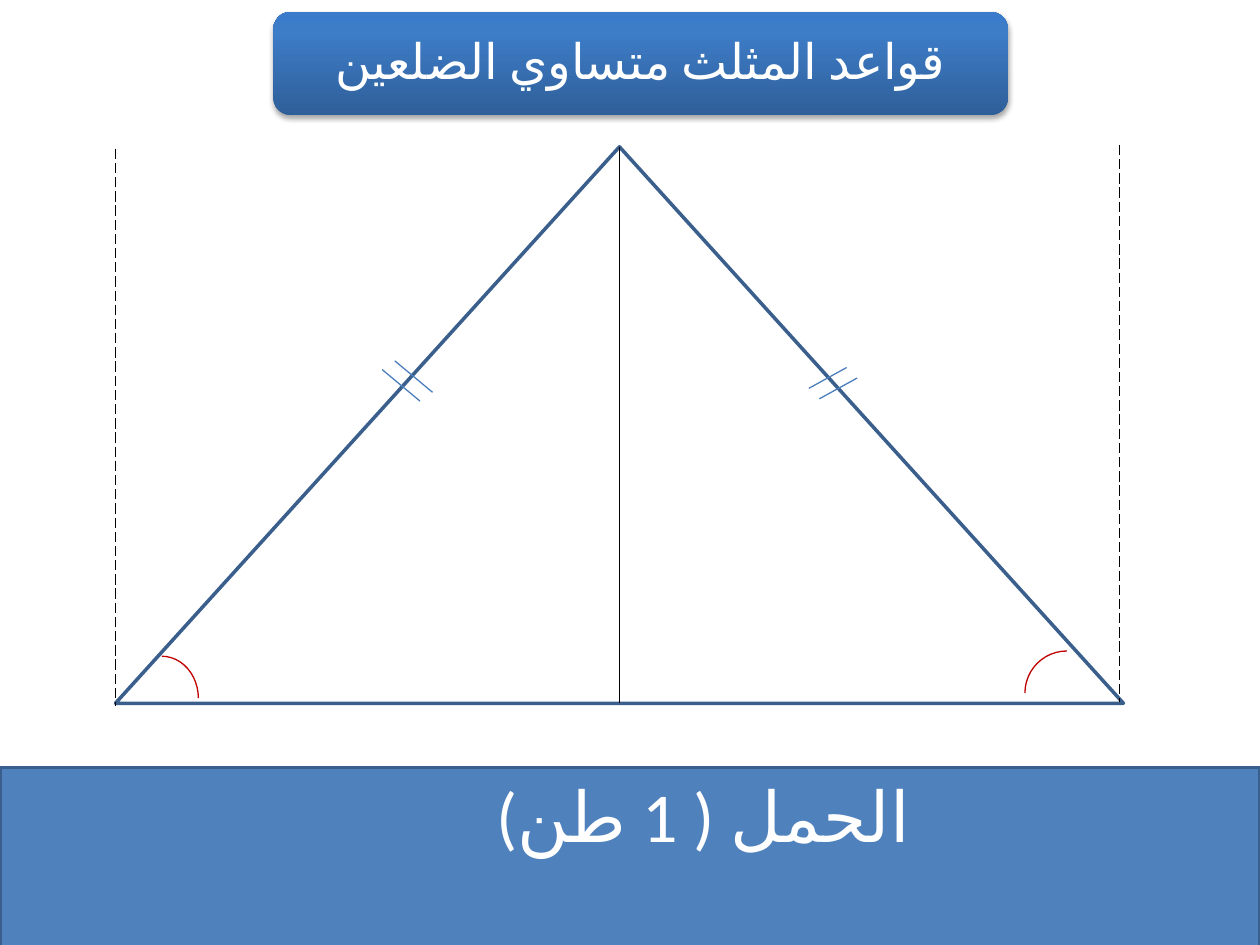
from lxml import etree
from pptx import Presentation
from pptx.dml.color import RGBColor
from pptx.enum import dml, lang, shapes, text
from pptx.oxml import ns, parse_xml
from pptx.util import Pt

COLORS = {
    "outline": "3A5F8C", "tick": "4B7EBC", "angle": "C00000",
    "guide": "000000", "band": "4F81BD", "text": "FFFFFF",
}
TITLE_STOPS = [(0, "2F5F99"), (80, "3D7CC7"), (100, "3A7CCB")]
FONT = "Calibri"


def rgb(name):
    return RGBColor.from_string(COLORS[name])


def add_shape(container, kind, box, fill=None, line=None, width=0.75):
    shape = container.add_shape(kind, *map(Pt, box))
    shape.shadow.inherit = False
    if fill:
        shape.fill.solid()
        shape.fill.fore_color.rgb = rgb(fill)
    else:
        shape.fill.background()
    if line:
        shape.line.color.rgb = rgb(line)
        shape.line.width = Pt(width)
    else:
        shape.line.fill.background()
    return shape


def add_line(slide, start, end, color, dash=None):
    connector = slide.shapes.add_connector(
        shapes.MSO_CONNECTOR.STRAIGHT, *map(Pt, (*start, *end)))
    connector.line.color.rgb = rgb(color)
    connector.line.width = Pt(0.75)
    if dash:
        connector.line.dash_style = dash
    etree.SubElement(connector._element.spPr, ns.qn("a:effectLst"))


def add_text(container, box, content, size):
    text_box = container.add_textbox(*map(Pt, box))
    frame = text_box.text_frame
    frame.word_wrap = True
    paragraph = frame.paragraphs[0]
    paragraph.alignment = text.PP_ALIGN.CENTER
    run = paragraph.add_run()
    run.text = content
    run.font.name = FONT
    run.font.size = Pt(size)
    run.font.color.rgb = rgb("text")
    run.font.language_id = lang.MSO_LANGUAGE_ID.ARABIC
    # Arabic letters take the complex-script font
    etree.SubElement(run.font._element, ns.qn("a:cs"), typeface=FONT)
    return frame


def style_title(shape):
    """Give the title plate its three-stop gradient and soft shadow."""
    properties = shape._element.spPr
    stops = "".join(
        f'<a:gs pos="{position * 1000}"><a:srgbClr val="{color}"/></a:gs>'
        for position, color in TITLE_STOPS)
    gradient = parse_xml(
        f'<a:gradFill {ns.nsdecls("a")} rotWithShape="1"><a:gsLst>{stops}</a:gsLst>'
        '<a:lin ang="16200000" scaled="0"/></a:gradFill>')
    properties.replace(properties.find(ns.qn("a:noFill")), gradient)
    shadow = parse_xml(
        f'<a:outerShdw {ns.nsdecls("a")} blurRad="{Pt(3.1)}" dist="{Pt(1.8)}" '
        'dir="5400000" rotWithShape="0"><a:srgbClr val="000000">'
        '<a:alpha val="35000"/></a:srgbClr></a:outerShdw>')
    properties.find(ns.qn("a:effectLst")).append(shadow)


def add_title(slide):
    group = slide.shapes.add_group_shape()
    plate = add_shape(group.shapes, shapes.MSO_SHAPE.ROUNDED_RECTANGLE,
                      (156.24, 6.8, 419.76, 59.04))
    style_title(plate)
    frame = add_text(group.shapes, (159.12, 9.7, 414, 53.28),
                     "قواعد المثلث متساوي الضلعين", 28)
    frame.vertical_anchor = text.MSO_ANCHOR.MIDDLE
    frame.margin_left = frame.margin_right = Pt(8.64)
    frame.margin_top = frame.margin_bottom = Pt(8.64)
    paragraph = frame.paragraphs[0]
    paragraph.line_spacing = 0.9
    paragraph.space_after = Pt(9.8)
    paragraph._p.get_or_add_pPr().set("rtl", "1")


def add_triangle(slide):
    add_shape(slide.shapes, shapes.MSO_SHAPE.ISOSCELES_TRIANGLE,
              (66, 83.9, 576, 318), line="outline", width=2)

    # Pairs of ticks mark the equal sides
    ticks = [((483.84, 210), (-21.6, 11.9), (6, 6)),
             ((247.2, 224.2), (-21.6, -18), (-7.2, 5))]
    for (x, y), (dx, dy), (step_x, step_y) in ticks:
        for index in range(2):
            left, top = x + index * step_x, y + index * step_y
            add_line(slide, (left, top), (left + dx, top + dy), "tick")

    # Arcs mark the equal base angles
    add_shape(slide.shapes, shapes.MSO_SHAPE.ARC,
              (71.6, 375, 41.76, 48), line="angle")
    right_arc = add_shape(slide.shapes, shapes.MSO_SHAPE.ARC,
                          (585.7, 372, 48, 48), line="angle")
    right_arc._element.spPr.find(ns.qn("a:xfrm")).set("flipH", "1")


def add_guides(slide):
    dash = dml.MSO_LINE.LONG_DASH
    for x, top, bottom, style in [(353.9, 84, 401.76, None),
                                  (639.7, 82.8, 401.04, dash),
                                  (65.9, 84.96, 403.2, dash)]:
        add_line(slide, (x, top), (x, bottom), "guide", style)


def add_load(slide):
    add_shape(slide.shapes, shapes.MSO_SHAPE.RECTANGLE,
              (0, 438.5, 720, 113.76), "band", "outline", 2)
    frame = add_text(slide.shapes, (221.76, 437.76, 360, 55.44),
                     "الحمل ( 1 طن)", 40)
    frame.auto_size = text.MSO_AUTO_SIZE.SHAPE_TO_FIT_TEXT


def main():
    presentation = Presentation()
    presentation.slide_width, presentation.slide_height = Pt(720), Pt(540)
    slide = presentation.slides.add_slide(presentation.slide_layouts[6])
    add_triangle(slide)
    add_title(slide)
    add_guides(slide)
    add_load(slide)
    presentation.save("out.pptx")


if __name__ == "__main__":
    main()
